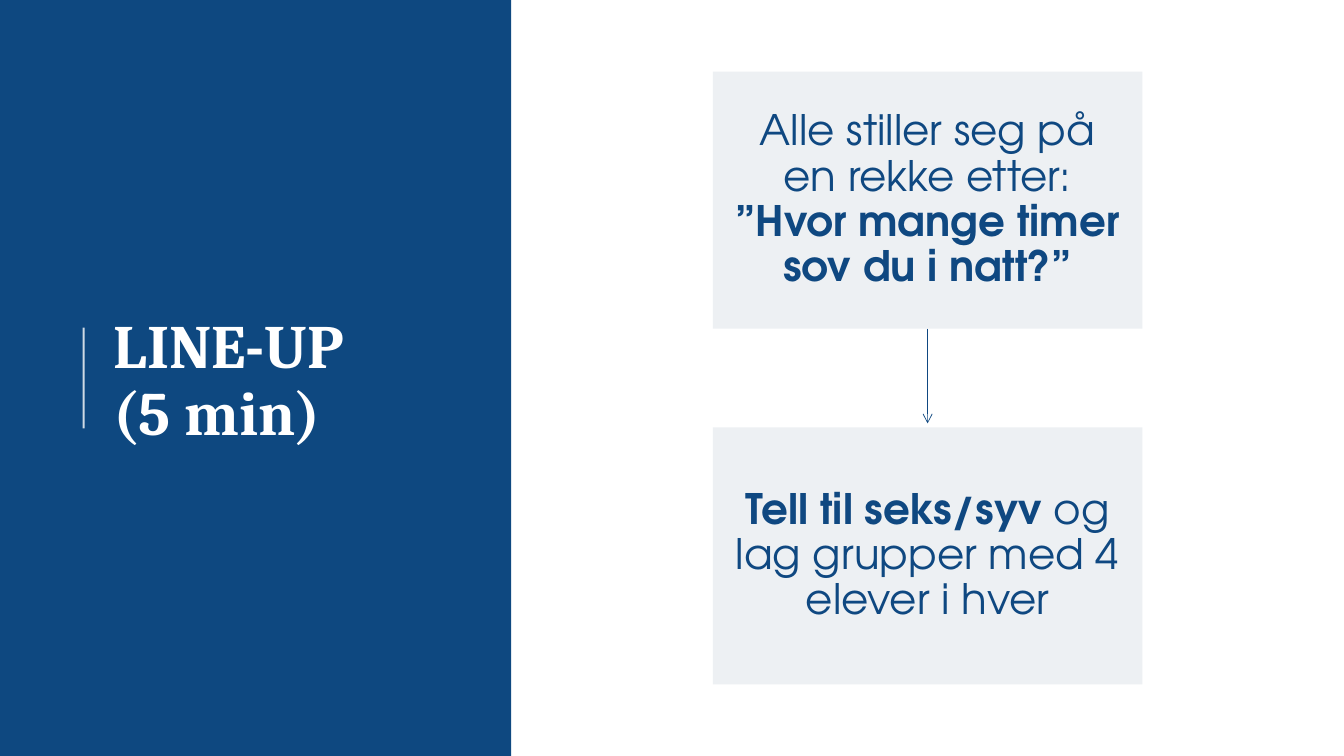
from lxml import etree
from pptx import Presentation
from pptx.dml.color import RGBColor
from pptx.enum.shapes import MSO_CONNECTOR, MSO_SHAPE
from pptx.enum.text import MSO_ANCHOR, PP_ALIGN
from pptx.oxml.ns import qn
from pptx.util import Inches, Pt

TITLE = "LINE-UP\v(5 min)"
# Each step is a list of (text, bold) parts.
STEPS = [
    [("Alle stiller seg på en rekke etter: ", False),
     ("”Hvor mange timer sov du i natt?”", True)],
    [("Tell til seks/syv ", True),
     ("og lag grupper med 4 elever i hver", False)],
]

PANEL_BLUE = RGBColor(0x0E, 0x48, 0x80)
STEP_BLUE = RGBColor(0x0F, 0x48, 0x81)
STEP_GREY = RGBColor(0xED, 0xF0, 0xF3)
WHITE = RGBColor(0xFF, 0xFF, 0xFF)
TITLE_FONT = "Cambria"
STEP_FONT = "TeX Gyre Adventor"

STEP_LEFT, STEP_TOP = 7.07, 0.71
STEP_WIDTH, STEP_HEIGHT = 4.26, 2.55
STEP_PITCH = 3.53
ARROW_END = 4.2


def add_rectangle(slide, left, top, width, height, color):
    rectangle = slide.shapes.add_shape(
        MSO_SHAPE.RECTANGLE, Inches(left), Inches(top), Inches(width), Inches(height))
    rectangle.shadow.inherit = False
    rectangle.fill.solid()
    rectangle.fill.fore_color.rgb = color
    rectangle.line.fill.background()
    return rectangle


def add_line(slide, x, top, bottom, color, width):
    """Add a vertical line without shadow."""
    line = slide.shapes.add_connector(
        MSO_CONNECTOR.STRAIGHT, Inches(x), Inches(top), Inches(x), Inches(bottom))
    line.line.color.rgb = color
    line.line.width = Pt(width)
    etree.SubElement(line._element.spPr, qn("a:effectLst"))
    return line


def add_title(slide):
    title = slide.shapes.add_textbox(Inches(1.03), Inches(0.78), Inches(3.69), Inches(6.02))
    frame = title.text_frame
    frame.word_wrap = True
    frame.vertical_anchor = MSO_ANCHOR.MIDDLE
    paragraph = frame.paragraphs[0]
    paragraph.text = TITLE
    paragraph.line_spacing = 0.9
    font = paragraph.font
    font.name, font.size, font.bold = TITLE_FONT, Pt(44), True
    font.color.rgb = WHITE


def add_step(slide, top, parts):
    step = add_rectangle(slide, STEP_LEFT, top, STEP_WIDTH, STEP_HEIGHT, STEP_GREY)
    frame = step.text_frame
    frame.word_wrap = True
    frame.vertical_anchor = MSO_ANCHOR.MIDDLE
    frame.margin_left = frame.margin_right = Inches(0.21)
    frame.margin_top = frame.margin_bottom = Inches(0.22)
    paragraph = frame.paragraphs[0]
    paragraph.alignment = PP_ALIGN.CENTER
    paragraph.line_spacing = 0.9
    font = paragraph.font
    font.name, font.size = STEP_FONT, Pt(30)
    font.color.rgb = STEP_BLUE
    for text, bold in parts:
        run = paragraph.add_run()
        run.text = text
        run.font.bold = bold
    return step


def main():
    presentation = Presentation()
    presentation.slide_width, presentation.slide_height = Inches(13.33), Inches(7.5)
    slide = presentation.slides.add_slide(presentation.slide_layouts[6])

    add_rectangle(slide, 0, 0, 5.07, 7.5, PANEL_BLUE)
    title_rule = add_line(slide, 0.83, 3.25, 4.25, WHITE, 1.5)
    rule_color = title_rule.line._ln.find(".//" + qn("a:srgbClr"))
    etree.SubElement(rule_color, qn("a:alpha"), val="80000")
    add_title(slide)

    steps = [add_step(slide, STEP_TOP + i * STEP_PITCH, parts)
             for i, parts in enumerate(STEPS)]
    arrow = add_line(slide, STEP_LEFT + STEP_WIDTH / 2, STEP_TOP + STEP_HEIGHT,
                     ARROW_END, STEP_BLUE, 0.5)
    arrow.begin_connect(steps[0], 2)
    etree.SubElement(arrow.line._ln, qn("a:tailEnd"), type="arrow")

    presentation.save("out.pptx")


if __name__ == "__main__":
    main()
